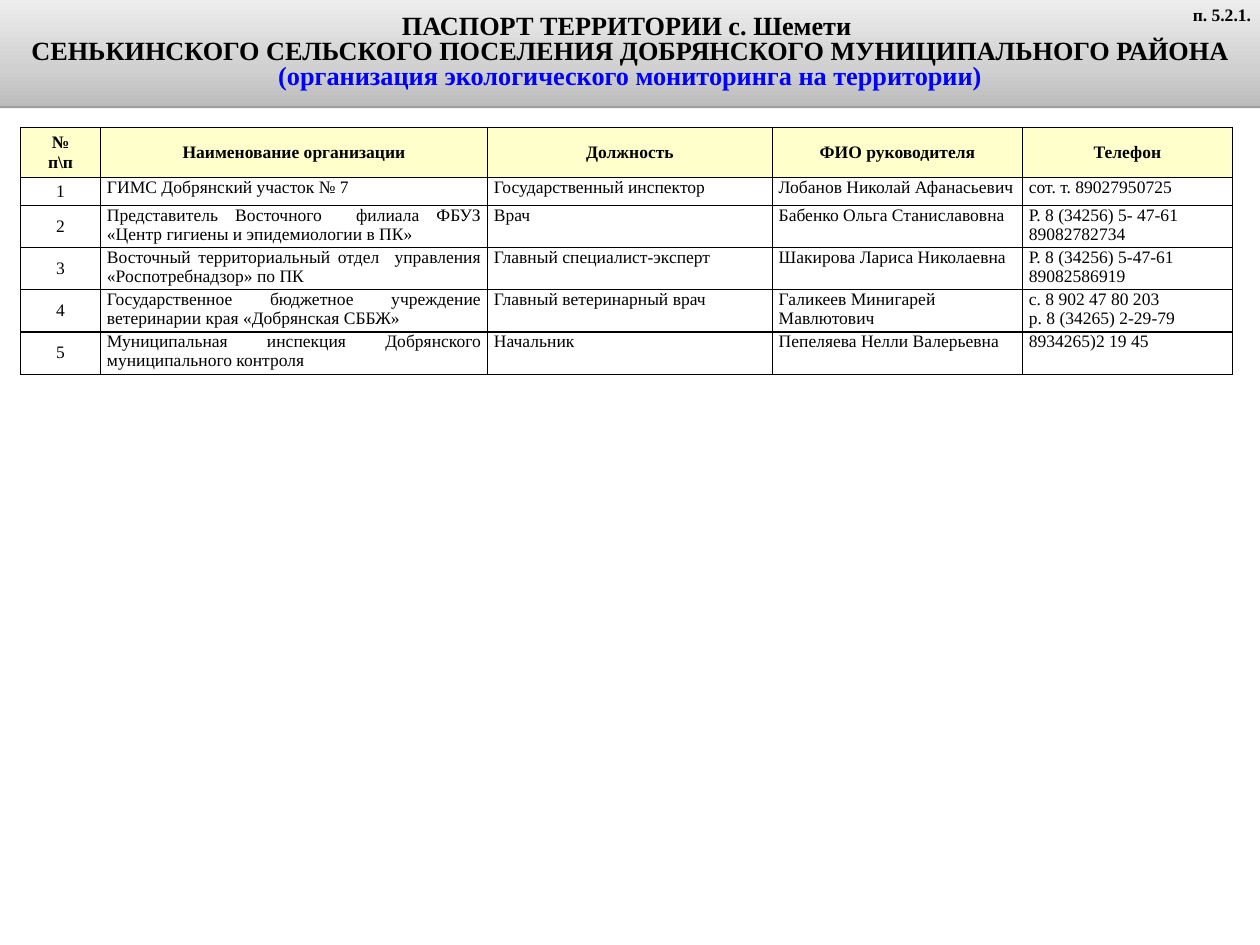
"""Builds the territory passport slide with its table of monitoring contacts."""
from lxml import etree
from pptx import Presentation
from pptx.dml.color import RGBColor
from pptx.enum import text as t
from pptx.oxml.ns import nsdecls
from pptx.util import Cm, Pt

BLACK = RGBColor(0x00, 0x00, 0x00)
WHITE = RGBColor(0xFF, 0xFF, 0xFF)
BLUE = RGBColor(0x00, 0x00, 0xFF)
CREAM = RGBColor(0xFF, 0xFF, 0xCC)
STOPS = {
    0: RGBColor(0xBC, 0xBC, 0xBC),
    35: RGBColor(0xD0, 0xD0, 0xD0),
    100: RGBColor(0xED, 0xED, 0xED),
}
LEFT, MID, RIGHT, JUST = (
    t.PP_ALIGN.LEFT, t.PP_ALIGN.CENTER, t.PP_ALIGN.RIGHT, t.PP_ALIGN.JUSTIFY)

TITLE = [
    "ПАСПОРТ ТЕРРИТОРИИ с. Шемети ",
    "СЕНЬКИНСКОГО СЕЛЬСКОГО ПОСЕЛЕНИЯ ДОБРЯНСКОГО МУНИЦИПАЛЬНОГО РАЙОНА",
    "(организация экологического мониторинга на территории)",
]
HEAD = ["№\nп\\п", "Наименование организации", "Должность",
        "ФИО руководителя", "Телефон"]
STAFF = [
    ["ГИМС Добрянский участок № 7", "Государственный инспектор",
     "Лобанов Николай Афанасьевич", "сот. т. 89027950725"],
    ["Представитель Восточного  филиала ФБУЗ «Центр гигиены и эпидемиологии в ПК»",
     "Врач", "Бабенко Ольга Станиславовна",
     "Р. 8 (34256) 5- 47-61\n89082782734"],
    ["Восточный территориальный отдел  управления «Роспотребнадзор» по ПК",
     "Главный специалист-эксперт", "Шакирова Лариса Николаевна",
     "Р. 8 (34256) 5-47-61\n89082586919"],
    ["Государственное бюджетное учреждение ветеринарии края «Добрянская СББЖ»",
     "Главный ветеринарный врач", "Галикеев Минигарей Мавлютович",
     "с. 8 902 47 80 203\nр. 8 (34265) 2-29-79"],
    ["Муниципальная инспекция Добрянского муниципального контроля",
     "Начальник", "Пепеляева Нелли Валерьевна", "8934265)2 19 45"],
]
WIDTHS = [2.26, 10.92, 8.04, 7.06, 5.92]
HEIGHTS = [1.4, 0.79] + [1.19] * 4


class Sheet:
    """Holds the style and the current slide."""

    def __init__(self, deck):
        self.face = {"name": "Times New Roman", "size": Pt(14), "bold": False}
        self.slide = deck.slides.add_slide(deck.slide_layouts[5])

    def put(self, frame, words, align, color=BLACK, **more):
        frame.text = words
        for para in frame.paragraphs:
            para.alignment = align
            for run in para.runs:
                for key, value in {**self.face, **more}.items():
                    setattr(run.font, key, value)
                run.font.color.rgb = color

    def title(self, lines, box):
        shape = self.slide.shapes.title
        shape.left, shape.top, shape.width, shape.height = map(Cm, box)
        frame = shape.text_frame
        frame.word_wrap = True
        frame.auto_size = t.MSO_AUTO_SIZE.NONE
        frame.vertical_anchor = t.MSO_ANCHOR.MIDDLE
        self.put(frame, "\n".join(lines), MID, size=Pt(21), bold=True)
        for para in frame.paragraphs:
            para.line_spacing = 0.8
        frame.paragraphs[-1].runs[0].font.color.rgb = BLUE
        stops = "".join(
            f'<a:gs pos="{pos * 1000}"><a:srgbClr val="{color}"/></a:gs>'
            for pos, color in STOPS.items())
        for part in (
            f'<a:prstGeom {nsdecls("a")} prst="rect"><a:avLst/></a:prstGeom>',
            f'<a:gradFill {nsdecls("a")} rotWithShape="1"><a:gsLst>{stops}</a:gsLst>'
            '<a:lin ang="16200000" scaled="1"/></a:gradFill>',
            f'<a:effectLst {nsdecls("a")}><a:outerShdw blurRad="0" dist="20320" '
            f'dir="5400000" rotWithShape="0"><a:srgbClr val="{BLACK}">'
            '<a:alpha val="38000"/></a:srgbClr></a:outerShdw></a:effectLst>',
        ):
            shape.element.spPr.append(etree.fromstring(part))

    def label(self, words, box):
        frame = self.slide.shapes.add_textbox(*map(Cm, box)).text_frame
        frame.word_wrap = True
        self.put(frame, words, RIGHT, bold=True)

    def cell(self, cell, words, align, fill, bold=False):
        self.put(cell.text_frame, words, align, bold=bold)
        tight = align == MID
        side, edge = (0.08, 0.08) if tight else (0.18, 0)
        style = {
            "margin_left": Cm(side), "margin_right": Cm(side),
            "margin_top": Cm(edge), "margin_bottom": Cm(edge),
            "vertical_anchor": t.MSO_ANCHOR.MIDDLE if tight else t.MSO_ANCHOR.TOP,
        }
        for key, value in style.items():
            setattr(cell, key, value)
        props = cell._tc.get_or_add_tcPr()
        for name in ("lnL", "lnR", "lnT", "lnB"):
            props.append(etree.fromstring(
                f'<a:{name} {nsdecls("a")} w="12700"><a:solidFill>'
                f'<a:srgbClr val="{BLACK}"/></a:solidFill></a:{name}>'))
        cell.fill.solid()
        cell.fill.fore_color.rgb = fill

    def table(self, head, rows, left, top):
        size = Cm(sum(WIDTHS)), Cm(sum(HEIGHTS))
        grid = self.slide.shapes.add_table(
            len(rows) + 1, len(head), Cm(left), Cm(top), *size).table
        grid.horz_banding = False
        for col, width in zip(grid.columns, WIDTHS):
            col.width = Cm(width)
        for row, height in zip(grid.rows, HEIGHTS):
            row.height = Cm(height)
        for c, words in enumerate(head):
            self.cell(grid.cell(0, c), words, MID, CREAM, True)
        aligns = [MID, JUST, LEFT, LEFT, LEFT]
        for r, row in enumerate(rows, 1):
            for c, words in enumerate([str(r)] + row):
                self.cell(grid.cell(r, c), words, aligns[c], WHITE)


def main():
    deck = Presentation()
    deck.slide_width, deck.slide_height = Cm(35.56), Cm(26.67)
    sheet = Sheet(deck)
    sheet.title(TITLE, (0, 0, 35.56, 3))
    sheet.table(HEAD, STAFF, 0.58, 3.61)
    sheet.label("п. 5.2.1.", (33.17, 0, 2.39, 0.84))
    deck.save("out.pptx")


if __name__ == "__main__":
    main()
